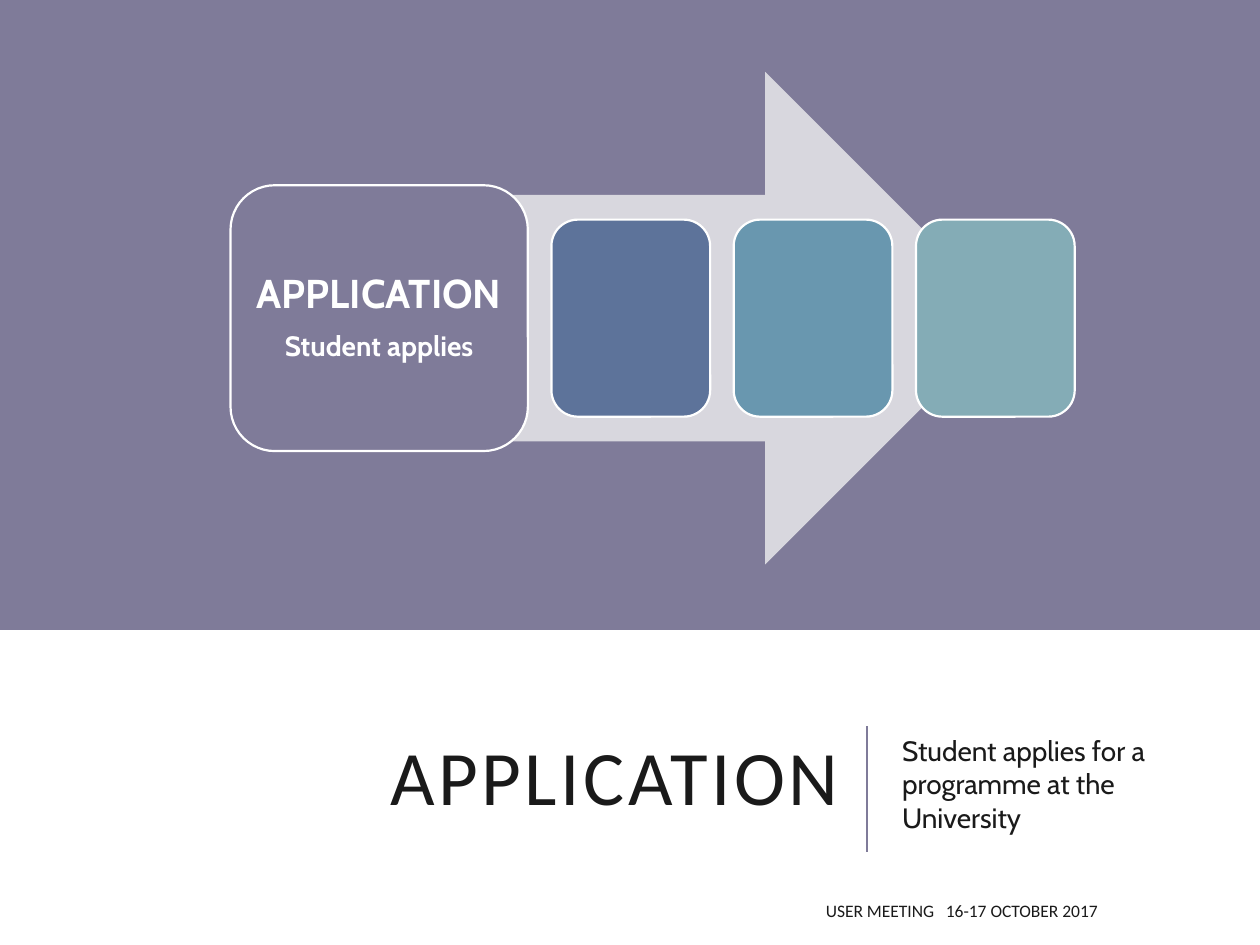
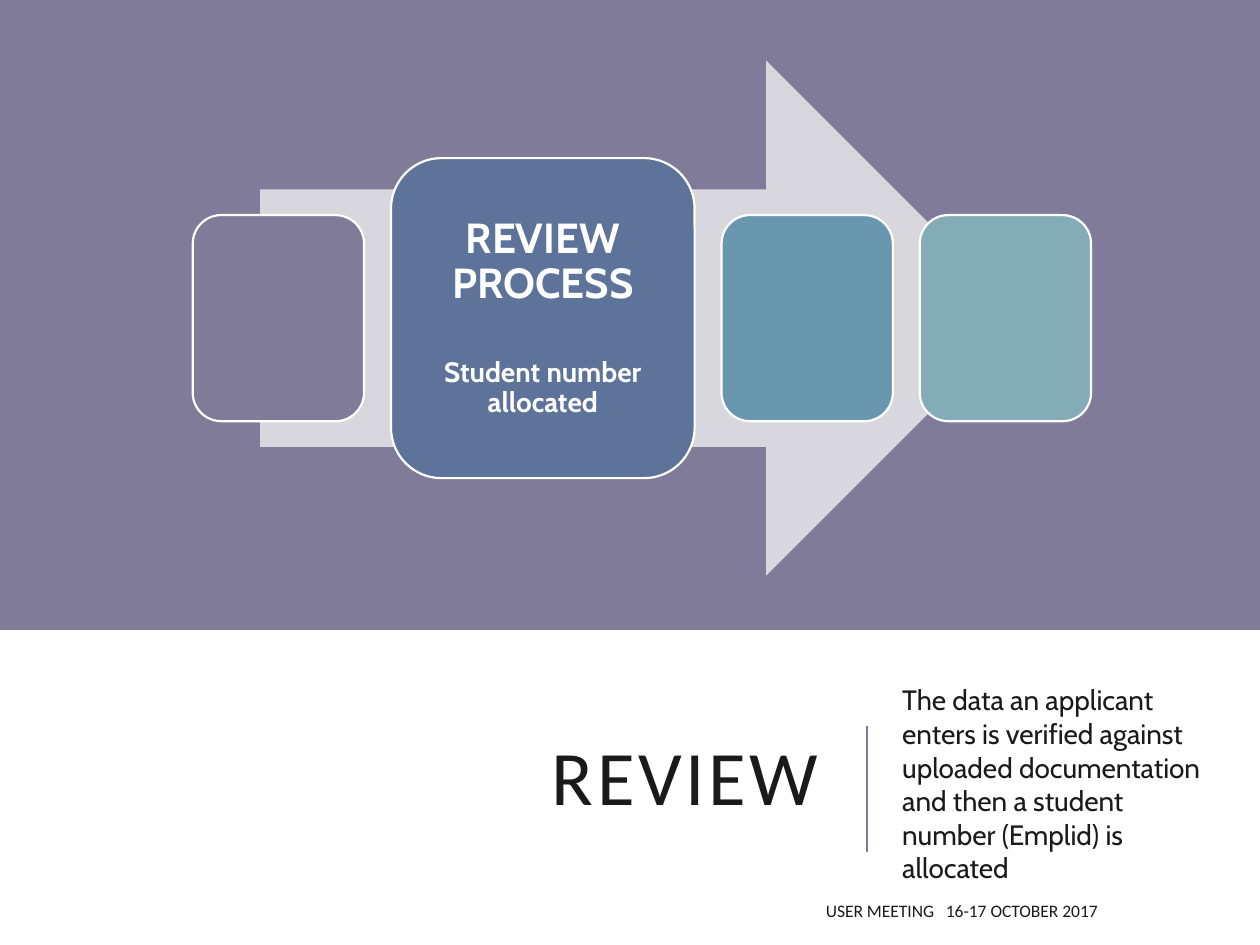
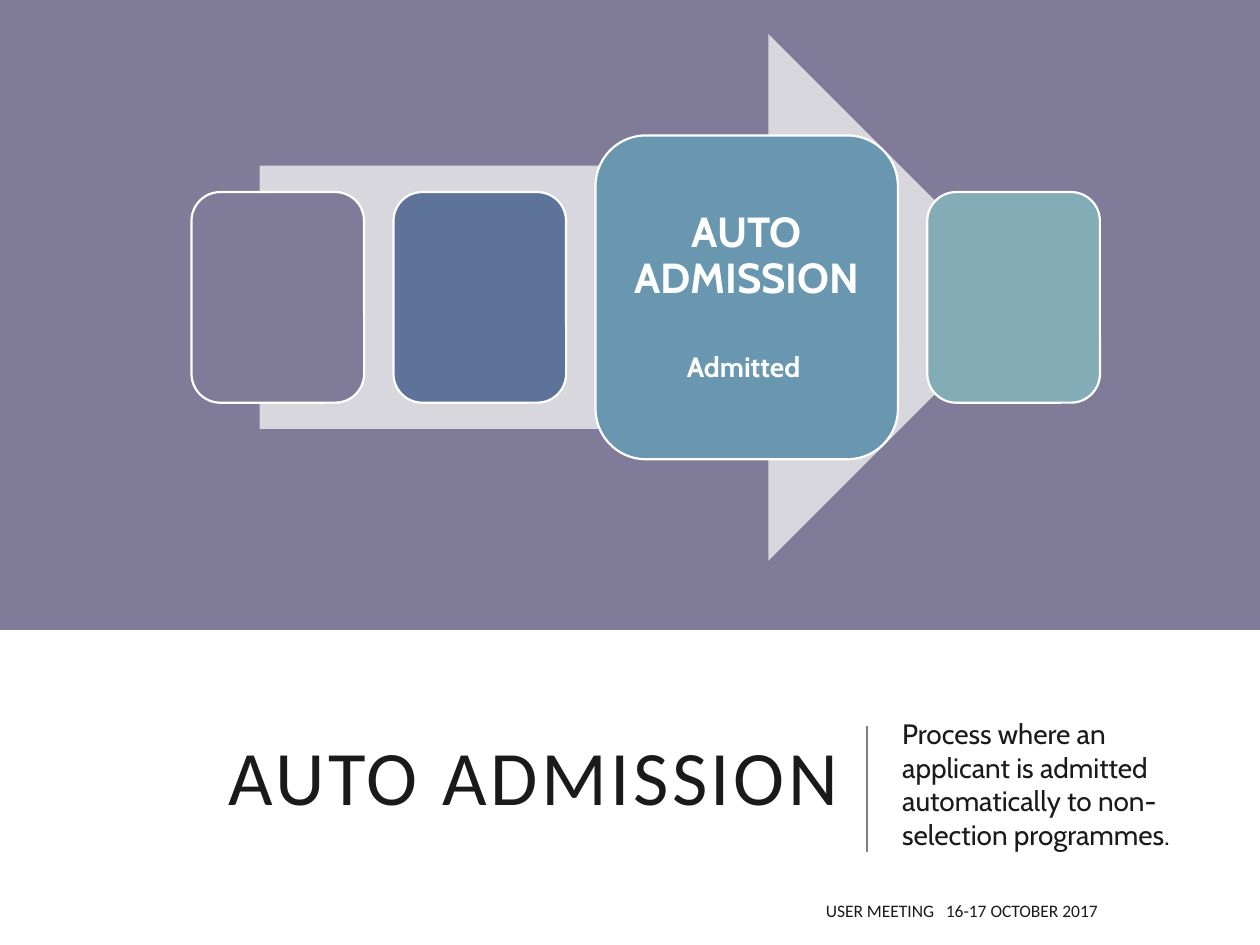
from dataclasses import dataclass
from typing import Any, NamedTuple

from lxml import etree
from pptx import Presentation
from pptx import util as u
from pptx.dml.color import RGBColor
from pptx.enum import shapes, text
from pptx.oxml.ns import qn


@dataclass(frozen=True)
class Theme:
    violet: str = "7F7B99"
    steel: str = "5D739A"
    sea: str = "6997AF"
    mist: str = "84ACB6"
    arrow: str = "D8D7DE"
    white: str = "FFFFFF"
    ink: str = "1A1A1A"
    heading_font: str = "Calibri"
    body_font: str = "Cabin"
    title_size: float = 44
    body_size: float = 16
    footer_size: float = 10
    divider_width: float = 1.5
    card_line: float = 1.25
    title_tracking: int = 200

    @property
    def steps(self) -> tuple[str, ...]:
        return self.violet, self.steel, self.sea, self.mist


class Box(NamedTuple):
    left: float
    top: float
    width: float
    height: float


@dataclass(frozen=True)
class Flow:
    left: float
    width: float
    middle: float
    arrow_height: float
    active: int
    card_width: float
    active_width: float
    active_height: float


@dataclass(frozen=True)
class Step:
    title: str
    description: str
    label: str
    label_size: float
    label_gap: float
    note: str
    flow: Flow


THEME = Theme()
WIDTH, HEIGHT = u.Inches(10), u.Inches(7.5)
COLUMNS, ROWS = 100, 75
ARROW_SHARE = 0.85
CARD_SHARE = 0.4
BAND = Box(0, 0, 100, 50)
TITLE = Box(3.8, 54.2, 63.8, 16)
SUBTITLE = Box(70.6, 54.2, 26.2, 16)
FOOTER = Box(39.7, 70.8, 48.4, 3)
DIVIDER_COLUMN, DIVIDER_ROWS = 68.8, (67.6, 57.6)
FOOTER_TEXT = "USER MEETING   16-17 OCTOBER 2017"

STEPS = (
    Step("APPLICATION", "Student applies for a programme at the University",
         "APPLICATION", 23, 9, "Student applies",
         Flow(18.3, 67, 25.25, 39.1, 0, 12.6, 23.6, 21.1)),
    Step("REVIEW ", "The data an applicant enters is verified against uploaded "
         "documentation and then a student number (Emplid) is allocated",
         "REVIEW PROCESS", 24, 29, "Student number allocated",
         Flow(15.3, 71.3, 25.25, 40.9, 1, 13.6, 24.1, 25.4)),
    Step("AUTO ADMISSION", "Process where an applicant is admitted automatically "
         "to non-selection programmes.",
         "AUTO ADMISSION", 24, 29, "Admitted ",
         Flow(15.2, 72.1, 23.6, 41.8, 2, 13.7, 24, 25.7)),
)


def col(n: float) -> int:
    return round(WIDTH * n / COLUMNS)


def row(n: float) -> int:
    return round(HEIGHT * n / ROWS)


def place(box: Box) -> tuple[int, int, int, int]:
    return col(box.left), row(box.top), col(box.width), row(box.height)


def apply(target: Any, values: dict[str, Any]) -> None:
    for name, value in values.items():
        setattr(target, name, value)


def write(p: Any, words: str, font: str, size: float, color: str,
          bold: bool = False, **layout: Any) -> Any:
    apply(p, {"space_before": u.Pt(0), **layout})
    r = p.add_run()
    r.text = words
    apply(r.font, {"name": font, "size": u.Pt(size), "bold": bold})
    r.font.color.rgb = RGBColor.from_string(color)
    return r


def frame(sp: Any) -> Any:
    tf = sp.text_frame
    apply(tf, {"word_wrap": True, "auto_size": text.MSO_AUTO_SIZE.NONE,
               "vertical_anchor": text.MSO_ANCHOR.MIDDLE})
    return tf


def draw_shape(s: Any, kind: Any, box: Box, fill: str, line: str | None = None) -> Any:
    sp = s.shapes.add_shape(kind, *place(box))
    sp.shadow.inherit = False
    sp.fill.solid()
    sp.fill.fore_color.rgb = RGBColor.from_string(fill)
    if line:
        sp.line.color.rgb = RGBColor.from_string(line)
        sp.line.width = u.Pt(THEME.card_line)
    else:
        sp.line.fill.background()
    return sp


def draw_backdrop(s: Any) -> None:
    draw_shape(s, shapes.MSO_SHAPE.RECTANGLE, BAND, THEME.violet)
    x, (bottom, top) = col(DIVIDER_COLUMN), DIVIDER_ROWS
    divider = s.shapes.add_connector(shapes.MSO_CONNECTOR.STRAIGHT, x, row(bottom), x, row(top))
    divider.line.color.rgb = RGBColor.from_string(THEME.violet)
    divider.line.width = u.Pt(THEME.divider_width)
    etree.SubElement(divider._element.spPr, qn("a:effectLst"))


def draw_texts(s: Any, step: Step) -> None:
    title, subtitle = s.placeholders
    r = write(frame(title).paragraphs[0], step.title, THEME.heading_font, THEME.title_size,
              THEME.ink, alignment=text.PP_ALIGN.RIGHT, line_spacing=0.8)
    r._r.get_or_add_rPr().set("spc", str(THEME.title_tracking))
    write(frame(subtitle).paragraphs[0], step.description, THEME.body_font, THEME.body_size,
          THEME.ink, alignment=text.PP_ALIGN.LEFT, space_after=u.Pt(2))
    footer = s.shapes.add_textbox(*place(FOOTER))
    write(frame(footer).paragraphs[0], FOOTER_TEXT, THEME.heading_font, THEME.footer_size,
          THEME.ink, alignment=text.PP_ALIGN.RIGHT)


def draw_label(card: Any, step: Step) -> None:
    tf = frame(card)
    margin = u.Inches(0.1)
    apply(tf, {f"margin_{side}": margin for side in ("left", "top", "right", "bottom")})
    centred = {"alignment": text.PP_ALIGN.CENTER, "line_spacing": 0.9}
    write(tf.paragraphs[0], step.label, THEME.body_font, step.label_size, THEME.white,
          True, space_after=u.Pt(step.label_gap), **centred)
    write(tf.add_paragraph(), step.note, THEME.body_font, THEME.body_size, THEME.white,
          True, **centred)


def draw_flow(s: Any, step: Step) -> None:
    f = step.flow
    arrow_width = f.width * ARROW_SHARE
    draw_shape(s, shapes.MSO_SHAPE.RIGHT_ARROW,
               Box(f.left + (f.width - arrow_width) / 2, f.middle - f.arrow_height / 2,
                   arrow_width, f.arrow_height), THEME.arrow)
    sizes = [(f.card_width, f.arrow_height * CARD_SHARE)] * len(THEME.steps)
    sizes[f.active] = f.active_width, f.active_height
    gap = (f.width - sum(width for width, _ in sizes)) / (len(sizes) - 1)
    left = f.left
    for i, ((width, height), color) in enumerate(zip(sizes, THEME.steps)):
        card = draw_shape(s, shapes.MSO_SHAPE.ROUNDED_RECTANGLE,
                          Box(left, f.middle - height / 2, width, height), color, THEME.white)
        if i == f.active:
            draw_label(card, step)
        left += width + gap


def main() -> None:
    prs = Presentation()
    apply(prs, {"slide_width": WIDTH, "slide_height": HEIGHT})
    layout = prs.slide_layouts[0]
    for sp, box in zip(layout.placeholders, (TITLE, SUBTITLE)):
        apply(sp, dict(zip(("left", "top", "width", "height"), place(box))))
    for step in STEPS:
        s = prs.slides.add_slide(layout)
        draw_backdrop(s)
        draw_texts(s, step)
        draw_flow(s, step)
    prs.save("out.pptx")


if __name__ == "__main__":
    main()
